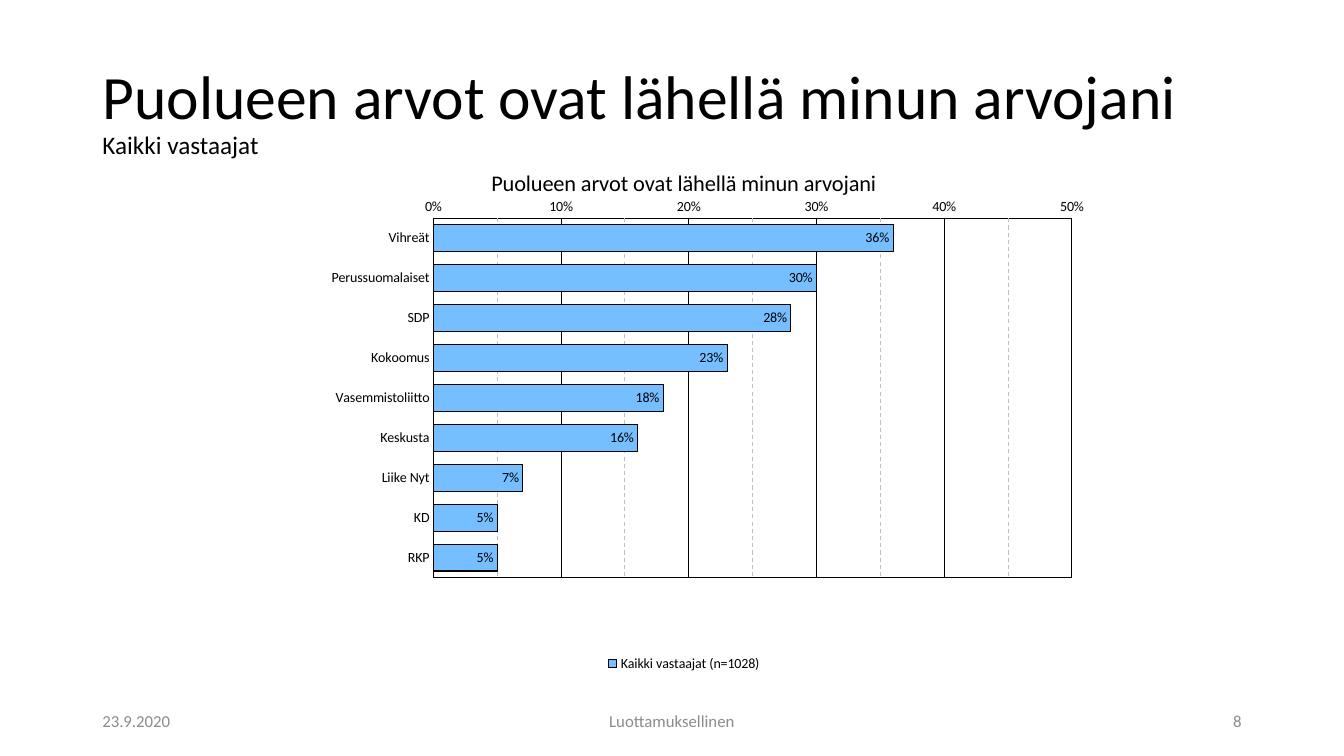
from lxml.etree import SubElement
from pptx import Presentation
from pptx.chart.data import CategoryChartData as ChartData
from pptx.dml.color import RGBColor
from pptx.enum.chart import XL_AXIS_CROSSES as Cross
from pptx.enum.chart import XL_CHART_TYPE as Kind
from pptx.enum.chart import XL_LABEL_POSITION as Spot
from pptx.enum.chart import XL_LEGEND_POSITION as Side
from pptx.enum.chart import XL_TICK_MARK as Tick
from pptx.enum.text import MSO_ANCHOR as Anchor
from pptx.enum.text import MSO_AUTO_SIZE as Fit
from pptx.enum.text import PP_ALIGN as Align
from pptx.oxml import parse_xml
from pptx.oxml.ns import nsdecls, qn
from pptx.util import Pt

FACE = "Calibri"
HEAD = "Puolueen arvot ovat lähellä minun arvojani"
GROUP = "Kaikki vastaajat"
SHARES = {
    "Vihreät": 0.36, "Perussuomalaiset": 0.30, "SDP": 0.28,
    "Kokoomus": 0.23, "Vasemmistoliitto": 0.18, "Keskusta": 0.16,
    "Liike Nyt": 0.07, "KD": 0.05, "RKP": 0.05,
}
PLOT = {"x": 0.216, "y": 0.133, "w": 0.724, "h": 0.682}
FOOT = [
    ("23.9.2020", 66, 216, Align.LEFT),
    ("Luottamuksellinen", 318, 324, Align.CENTER),
    ("8", 678, 216, Align.RIGHT),
]


def color(code):
    return RGBColor.from_string(code)


def style(font, size, code="000000"):
    font.name, font.size, font.bold = FACE, Pt(size), False
    font.color.rgb = color(code)


def stroke(line):
    line.color.rgb = color("000000")
    line.width = Pt(0.75)


def outline(code, dash):
    """Line properties for chart parts without a format object."""
    return parse_xml(
        f'<c:spPr {nsdecls("c", "a")}><a:noFill/><a:ln w="{Pt(0.75)}">'
        f'<a:solidFill><a:srgbClr val="{code}"/></a:solidFill>'
        f'<a:prstDash val="{dash}"/></a:ln></c:spPr>')


def place(shape, left, top, width, height):
    shape.left, shape.top = Pt(left), Pt(top)
    shape.width, shape.height = Pt(width), Pt(height)


def add_title(slide):
    title = slide.shapes.title
    place(title, 66, 28.75, 828, 104.4)
    frame = title.text_frame
    frame.auto_size, frame.vertical_anchor = Fit.NONE, Anchor.MIDDLE
    para = frame.paragraphs[0]
    para.text = f"{HEAD}\v{GROUP}"
    para.alignment, para.line_spacing = Align.LEFT, 0.9
    for run, size in zip(para.runs, (44, 18)):
        style(run.font, size)


def add_foot(slide, text, left, width, align):
    box = slide.shapes.add_textbox(Pt(left), Pt(500.5), Pt(width), Pt(28.75))
    frame = box.text_frame
    frame.word_wrap, frame.vertical_anchor = True, Anchor.MIDDLE
    frame.text = text
    para = frame.paragraphs[0]
    para.alignment = align
    style(para.runs[0].font, 12, "8C8C8C")


def frame_plot(chart):
    """Fix the inner plot area and give it a thin border."""
    area = chart.plots[0]._element.getparent()
    for old in area.findall(qn("c:layout")):
        area.remove(old)
    layout = parse_xml(f"<c:layout {nsdecls('c')}/>")
    area.insert(0, layout)
    manual = SubElement(layout, qn("c:manualLayout"))
    rules = {"layoutTarget": "inner", "xMode": "edge", "yMode": "edge", **PLOT}
    for name, val in rules.items():
        SubElement(manual, qn(f"c:{name}")).set("val", str(val))
    area.append(outline("000000", "solid"))


def set_axes(chart):
    cat, val = chart.category_axis, chart.value_axis
    for axis in (cat, val):
        axis.major_tick_mark = axis.minor_tick_mark = Tick.NONE
        style(axis.tick_labels.font, 10)
    cat.reverse_order, cat.crosses = True, Cross.MAXIMUM
    stroke(cat.format.line)
    val.minimum_scale, val.maximum_scale = 0, 0.5
    val.major_unit, val.minor_unit = 0.1, 0.05
    val.tick_labels.number_format = "0%"
    val.tick_labels.number_format_is_linked = False
    val.format.line.fill.background()
    val.has_major_gridlines = val.has_minor_gridlines = True
    stroke(val.major_gridlines.format.line)
    minor = val._element.find(qn("c:minorGridlines"))
    minor.append(outline("BFBFBF", "dash"))


def set_bars(plot):
    plot.gap_width, plot.vary_by_categories = 50, False
    bars = plot.series[0]
    bars.format.fill.solid()
    bars.format.fill.fore_color.rgb = color("75BEFF")
    stroke(bars.format.line)
    labels = bars.data_labels
    labels.show_value, labels.position = True, Spot.INSIDE_END
    labels.number_format, labels.number_format_is_linked = "0%", False
    style(labels.font, 10)


def add_bars(slide):
    data = ChartData(number_format="0%")
    data.categories = list(SHARES)
    data.add_series(f"{GROUP} (n=1028)", list(SHARES.values()))
    chart = slide.shapes.add_chart(
        Kind.BAR_CLUSTERED, Pt(173.5), Pt(105.85), Pt(630), Pt(376.5), data
    ).chart
    style(chart.font, 10)
    chart.has_title = True
    chart.chart_title.include_in_layout = False
    head = chart.chart_title.text_frame
    head.text = HEAD
    style(head.paragraphs[0].runs[0].font, 16)
    chart.has_legend = True
    chart.legend.position = Side.BOTTOM
    chart.legend.include_in_layout = False
    style(chart.legend.font, 10)
    set_axes(chart)
    set_bars(chart.plots[0])
    frame_plot(chart)


def main():
    deck = Presentation()
    deck.slide_width, deck.slide_height = Pt(960), Pt(540)
    slide = deck.slides.add_slide(deck.slide_layouts[5])
    add_title(slide)
    add_bars(slide)
    for item in FOOT:
        add_foot(slide, *item)
    deck.save("out.pptx")


if __name__ == "__main__":
    main()
